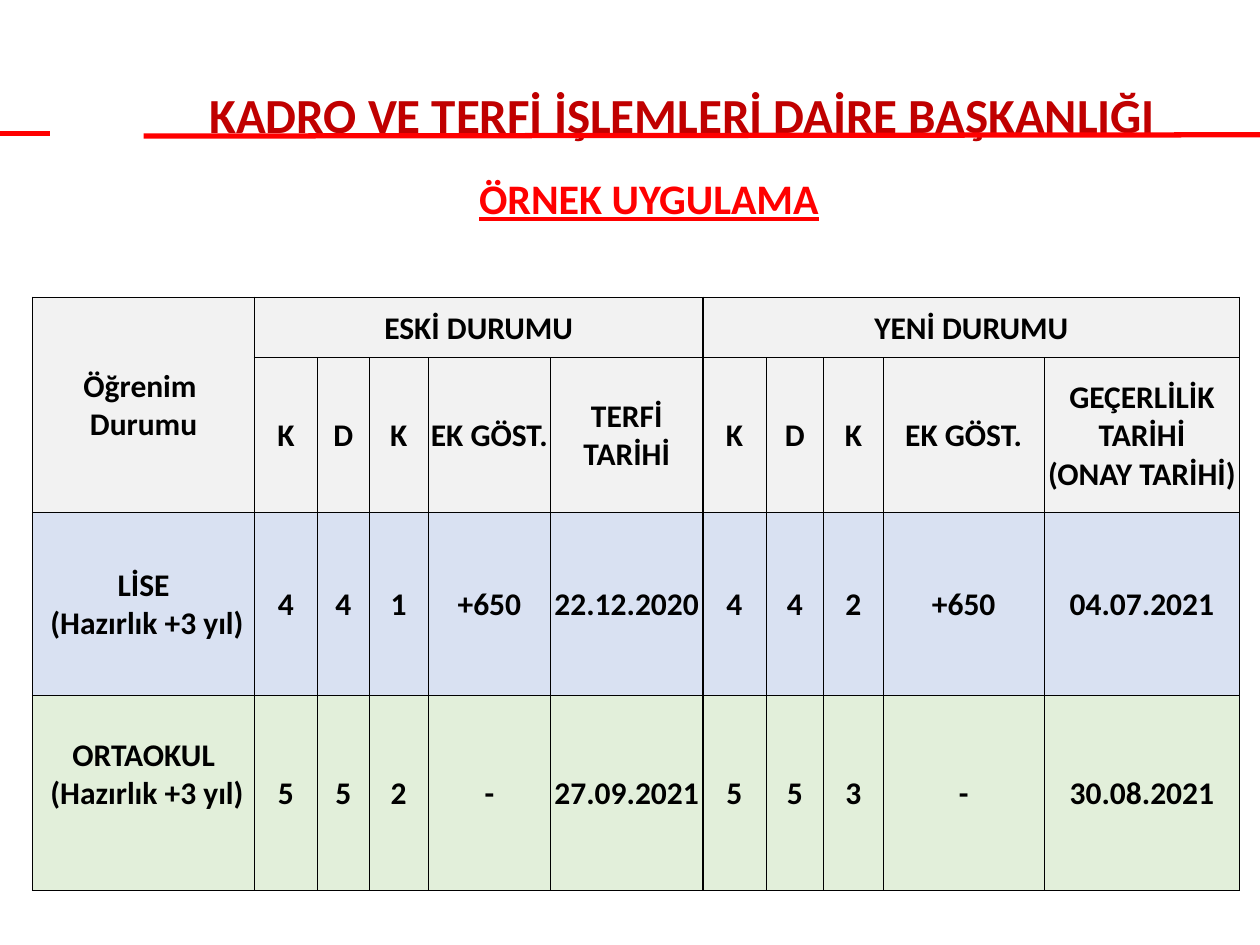
"""Build the slide comparing old and new grades by level of schooling."""
from dataclasses import dataclass

from lxml import etree
from pptx import Presentation
from pptx import util as u
from pptx.dml import color
from pptx.enum import shapes, text
from pptx.oxml import ns

FONT = "Calibri"
BLACK, RED, DARK_RED = "000000", "FF0000", "C00000"
COL_WIDTHS = [1.76, 0.5, 0.41, 0.47, 0.97, 1.21, 0.5, 0.46, 0.47, 1.28, 1.55]
GROUP_STARTS, GROUP_ENDS = (0, 1, 6), (0, 5, 10)


@dataclass
class Row:
    height: float
    fill: str
    values: list[str]
    label_bottom: float = 0


@dataclass
class Rule:
    x1: float
    y1: float
    x2: float
    y2: float


ROWS = [
    Row(0.48, "F2F2F2", ["Öğrenim \nDurumu", "ESKİ DURUMU", "", "", "", "",
                         "YENİ DURUMU", "", "", "", ""]),
    Row(1.23, "F2F2F2", ["", "K", "D", "K", "EK GÖST.", "TERFİ TARİHİ",
                         "K", "D", "K", "EK GÖST.", "GEÇERLİLİK TARİHİ\n(ONAY TARİHİ)"]),
    Row(1.45, "D9E1F2", ["LİSE\n (Hazırlık +3 yıl)", "4", "4", "1", "+650", "22.12.2020",
                         "4", "4", "2", "+650", "04.07.2021"]),
    Row(1.55, "E2EFDA", ["ORTAOKUL\n (Hazırlık +3 yıl)", "5", "5", "2", "-", "27.09.2021",
                         "5", "5", "3", "-", "30.08.2021"], 0.3),
]
MERGES = [(0, 0, 1, 0), (0, 1, 0, 5), (0, 6, 0, 10)]
RULES = [Rule(0, 1.06, 0.4, 1.06), Rule(1.14, 1.08, 10, 1.07)]


def rgb(value: str) -> color.RGBColor:
    """Turn a hex string into a colour."""
    return color.RGBColor.from_string(value)


def write(tf, content: str, size: float, hex_color: str, underline: bool = False) -> None:
    """Write centred bold text, one run per line."""
    p = tf.paragraphs[0]
    p.alignment = text.PP_ALIGN.CENTER
    for i, line in enumerate(content.split("\n")):
        if i:
            p.add_line_break()
        r = p.add_run()
        r.text = line
        r.font.name, r.font.size, r.font.bold = FONT, u.Pt(size), True
        r.font.color.rgb = rgb(hex_color)
        if underline:
            r.font.underline = True


def add_border(cell, side: str, width: float) -> None:
    """Give one side of a cell a solid black border."""
    tc_pr = cell._tc.get_or_add_tcPr()
    ln = etree.SubElement(tc_pr, ns.qn(f"a:ln{side}"), w=str(u.Pt(width)))
    fill = etree.SubElement(ln, ns.qn("a:solidFill"))
    etree.SubElement(fill, ns.qn("a:srgbClr"), val=BLACK)


def style_cell(cell, row: int, col: int) -> None:
    """Set the borders, fill, margins and anchor of a cell."""
    heavy = {"L": col in GROUP_STARTS, "R": col in GROUP_ENDS, "T": row == 0, "B": False}
    for side, is_heavy in heavy.items():
        add_border(cell, side, 1 if is_heavy else 0.5)
    cell.fill.solid()
    cell.fill.fore_color.rgb = rgb(ROWS[row].fill)
    cell.margin_left = cell.margin_right = cell.margin_top = u.Inches(0.01)
    cell.margin_bottom = u.Inches(0 if col else ROWS[row].label_bottom)
    cell.vertical_anchor = text.MSO_ANCHOR.MIDDLE


def add_grades(s) -> None:
    """Add the table of old and new grades."""
    frame = s.shapes.add_table(len(ROWS), len(COL_WIDTHS), u.Inches(0.26), u.Inches(2.36),
                               u.Inches(9.58), u.Inches(4.72))
    table = frame.table
    table.first_row = table.horz_banding = False
    for column, width in zip(table.columns, COL_WIDTHS):
        column.width = u.Inches(width)
    for i, row in enumerate(ROWS):
        table.rows[i].height = u.Inches(row.height)
        for j, value in enumerate(row.values):
            cell = table.cell(i, j)
            style_cell(cell, i, j)
            if value:
                write(cell.text_frame, value, 18, BLACK)
    for top, left, bottom, right in MERGES:
        table.cell(top, left).merge(table.cell(bottom, right))


def add_rule(s, rule: Rule) -> None:
    """Add a red line without a shadow."""
    line = s.shapes.add_connector(shapes.MSO_CONNECTOR.STRAIGHT, u.Inches(rule.x1),
                                  u.Inches(rule.y1), u.Inches(rule.x2), u.Inches(rule.y2))
    line.line.color.rgb = rgb(RED)
    line.line.width = u.Pt(3)
    etree.SubElement(line._element.spPr, ns.qn("a:effectLst"))


def add_headings(s) -> None:
    """Fill the title and add the subtitle below it."""
    sp = s.shapes.title
    sp.left, sp.top, sp.width, sp.height = map(u.Inches, (1.38, 0.15, 8.07, 1.04))
    sp.text_frame.vertical_anchor = text.MSO_ANCHOR.BOTTOM
    write(sp.text_frame, "KADRO VE TERFİ İŞLEMLERİ DAİRE BAŞKANLIĞI", 28, DARK_RED)
    sp = s.shapes.add_textbox(*map(u.Inches, (3.69, 1.32, 2.92, 0.5)))
    sp.text_frame.word_wrap = False
    write(sp.text_frame, "ÖRNEK UYGULAMA", 24, RED, underline=True)


def main() -> None:
    """Build and save the presentation."""
    prs = Presentation()
    prs.slide_width, prs.slide_height = u.Inches(10), u.Inches(7.5)
    s = prs.slides.add_slide(prs.slide_layouts[5])
    add_headings(s)
    add_grades(s)
    for rule in RULES:
        add_rule(s, rule)
    prs.save("out.pptx")


if __name__ == "__main__":
    main()
